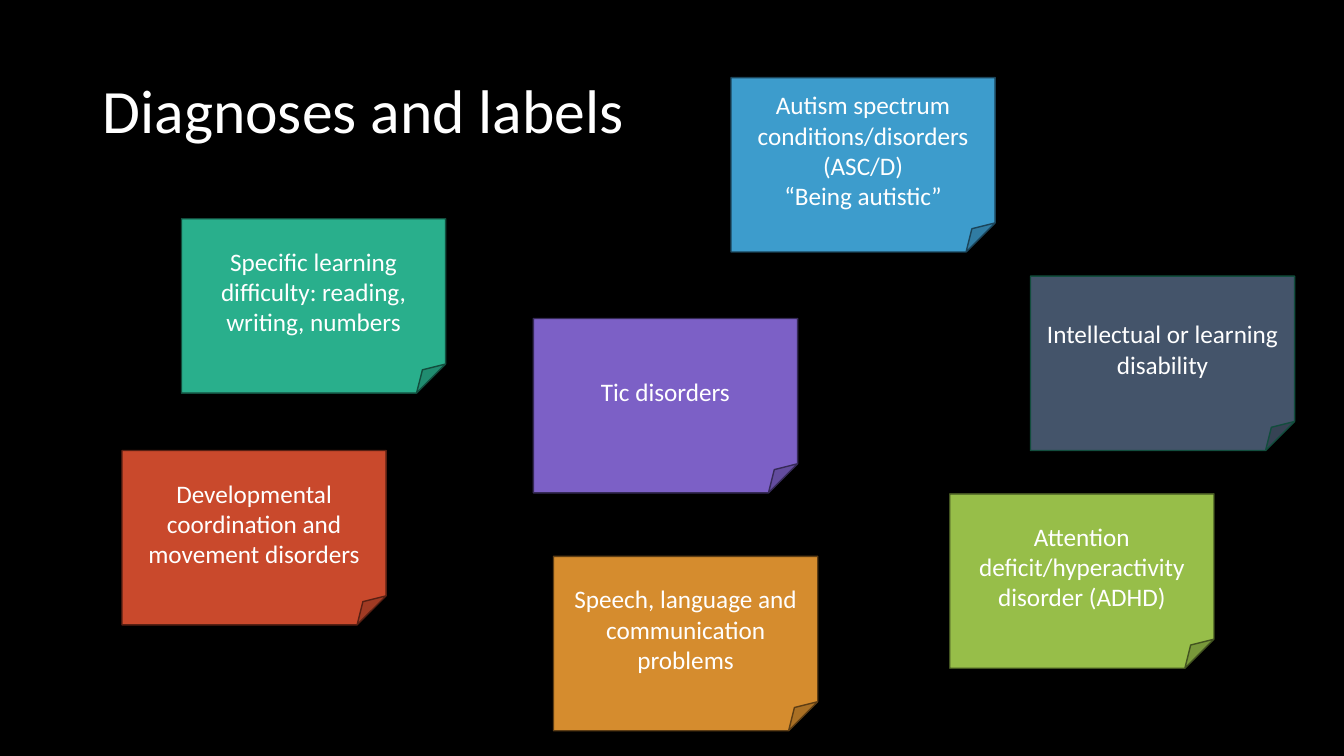
import pptx
import pptx.util
import pptx.dml.color
import pptx.enum.shapes
import pptx.enum.text

# Content: left and top in inches, fill, outline, paragraphs
TITLE = "Diagnoses and labels"
NOTES = [
    (7.25, 0.77, "3D9CCC", "1B4459",
     ["Autism spectrum conditions/disorders (ASC/D)", "“Being autistic”"]),
    (9.42, 4.9, "97BE49", "425320",
     ["Attention deficit/hyperactivity disorder (ADHD)"]),
    (10.22, 2.74, "44546A", "124D3D",
     ["Intellectual or learning disability"]),
    (1.8, 2.17, "29AF8C", "124D3D",
     ["Specific learning difficulty: reading, writing, numbers"]),
    (5.49, 5.52, "D58C2E", "5D3D14",
     ["Speech, language and communication problems"]),
    (5.29, 3.16, "7C60C6", "362A57",
     ["Tic disorders"]),
    (1.21, 4.47, "C9492C", "582013",
     ["Developmental coordination and movement disorders"]),
]
NOTE_WIDTH, NOTE_HEIGHT = 2.62, 1.73
FONT, WHITE, BLACK = "Calibri", "FFFFFF", "000000"


def paint(color_format, value):
    color_format.rgb = pptx.dml.color.RGBColor.from_string(value)


def inches(*lengths):
    return [pptx.util.Inches(length) for length in lengths]


def write(shape, lines, size, alignment, spacing=None):
    frame = shape.text_frame
    frame.word_wrap = True
    frame.vertical_anchor = pptx.enum.text.MSO_ANCHOR.MIDDLE
    frame.text = "\n".join(lines)
    for para in frame.paragraphs:
        para.alignment = alignment
        para.line_spacing = spacing
        para.font.name = FONT
        para.font.size = pptx.util.Pt(size)
        paint(para.font.color, WHITE)


def add_note(page, left, top, fill, outline, lines):
    note = page.shapes.add_shape(
        pptx.enum.shapes.MSO_SHAPE.FOLDED_CORNER,
        *inches(left, top, NOTE_WIDTH, NOTE_HEIGHT))
    note.shadow.inherit = False
    note.fill.solid()
    paint(note.fill.fore_color, fill)
    paint(note.line.color, outline)
    note.line.width = pptx.util.Pt(1)
    write(note, lines, 18, pptx.enum.text.PP_ALIGN.CENTER)


def main():
    deck = pptx.Presentation()
    deck.slide_width, deck.slide_height = inches(13.33, 7.5)
    page = deck.slides.add_slide(deck.slide_layouts[6])

    # Background
    page.background.fill.solid()
    paint(page.background.fill.fore_color, BLACK)

    # Title
    title = page.shapes.add_textbox(*inches(0.92, 0.4, 11.5, 1.45))
    write(title, [TITLE], 44, pptx.enum.text.PP_ALIGN.LEFT, 0.9)

    # Scattered sticky notes
    for note in NOTES:
        add_note(page, *note)

    deck.save("out.pptx")


if __name__ == "__main__":
    main()
